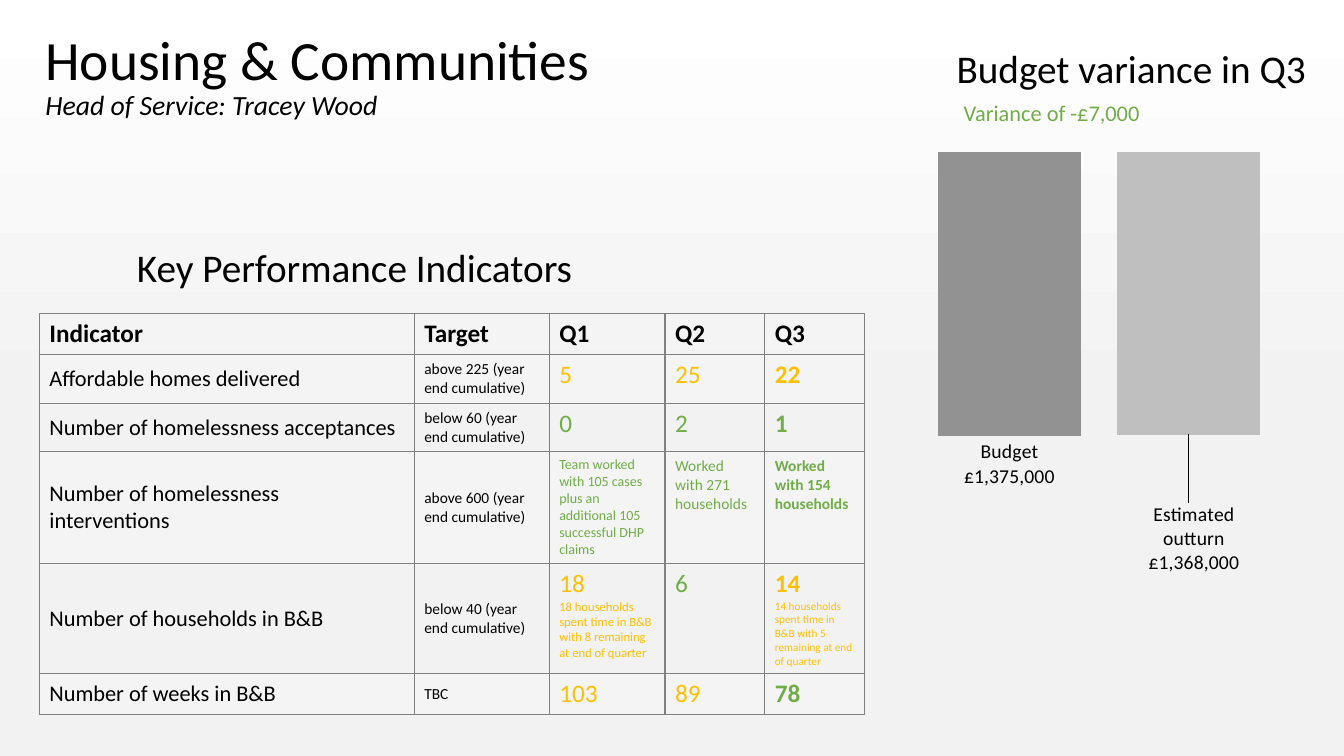
from collections import namedtuple

from lxml import etree
from pptx import Presentation
from pptx.chart.data import CategoryChartData as ChartData
from pptx.dml.color import RGBColor
from pptx.enum.chart import XL_CHART_TYPE as ChartType, XL_LABEL_POSITION as LabelPosition
from pptx.enum.text import MSO_ANCHOR as Anchor, MSO_AUTO_SIZE as AutoSize, PP_ALIGN as Align
from pptx.oxml import parse_xml
from pptx.oxml.ns import nsdecls, qn
from pptx.util import Inches, Pt

BLACK = RGBColor(0x00, 0x00, 0x00)
WHITE = RGBColor(0xFF, 0xFF, 0xFF)
PALE = RGBColor(0xF2, 0xF2, 0xF2)
AMBER = RGBColor(0xFF, 0xC0, 0x00)
GREEN = RGBColor(0x70, 0xAD, 0x47)
DARK_GREY = RGBColor(0x92, 0x92, 0x92)
LIGHT_GREY = RGBColor(0xBF, 0xBF, 0xBF)
BORDER = "808080"
FONT = "Calibri"
SLIDE_WIDTH, SLIDE_HEIGHT = Inches(13.33), Inches(7.5)

Reading = namedtuple("Reading", "text colour size note note_size", defaults=(18, "", 9))

COLUMNS = (372, 134, 115, 99, 99)
ROWS = (41, 48, 48, 111, 108, 41)
HEADINGS = ("Indicator", "Target", "Q1", "Q2", "Q3")
INDICATORS = [
    ("Affordable homes delivered", "above 225 (year end cumulative)",
     Reading("5", AMBER), Reading("25", AMBER), Reading("22", AMBER)),
    ("Number of homelessness acceptances", "below 60 (year end cumulative)",
     Reading("0", GREEN), Reading("2", GREEN), Reading("1", GREEN)),
    ("Number of homelessness interventions", "above 600 (year end cumulative)",
     Reading("Team worked with 105 cases plus an additional 105 successful DHP claims", GREEN, 10),
     Reading("Worked with 271 households", GREEN, 11),
     Reading("Worked with 154 households", GREEN, 11)),
    ("Number of households in B&B", "below 40 (year end cumulative)",
     Reading("18", AMBER, 18,
             "18 households spent time in B&B with 8 remaining at end of quarter", 9),
     Reading("6", GREEN),
     Reading("14", AMBER, 18,
             "14 households spent time in B&B with 5 remaining at end of quarter", 8)),
    ("Number of weeks in B&B", "TBC",
     Reading("103", AMBER), Reading("89", AMBER), Reading("78", GREEN)),
]
BARS = [
    ("Series 1", -1375, DARK_GREY, "Budget £1,375,000", 0),
    ("Series 2", -1368, LIGHT_GREY, "Estimated outturn £1,368,000", 0.15),
]


def share(left, top, width, height):
    """Turn percentages of the slide into a box."""
    return (round(SLIDE_WIDTH * left / 100), round(SLIDE_HEIGHT * top / 100),
            round(SLIDE_WIDTH * width / 100), round(SLIDE_HEIGHT * height / 100))


def add_span(para, text, size, colour=BLACK, bold=False, italic=False):
    """Add one formatted run to a paragraph."""
    span = para.add_run()
    span.text = text
    font = span.font
    font.name, font.size, font.bold, font.italic = FONT, Pt(size), bold, italic
    font.color.rgb = colour


def paint_background(page):
    """Fade the page from white to pale grey."""
    fill = page.background.fill
    fill.gradient()
    fill.gradient_angle = 270
    for stop, colour, position in zip(fill.gradient_stops, (WHITE, PALE), (0, 0.54)):
        stop.color.rgb = colour
        stop.position = position


def place_title(page, box):
    """Place the service name and its head in the title placeholder."""
    title = page.shapes.title
    title.left, title.top, title.width, title.height = box
    frame = title.text_frame
    frame.auto_size = AutoSize.NONE
    frame.vertical_anchor = Anchor.BOTTOM
    para = frame.paragraphs[0]
    para.alignment = Align.LEFT
    para.line_spacing = 0.9
    add_span(para, "Housing & Communities", 39.6)
    para.add_line_break()
    add_span(para, "Head of Service: Tracey Wood", 19.8, italic=True)


def place_text(page, box, text, size, colour=BLACK, anchor=Anchor.BOTTOM, spacing=0.9):
    """Place a single line of text in a box."""
    frame = page.shapes.add_textbox(*box).text_frame
    frame.word_wrap = True
    frame.vertical_anchor = anchor
    para = frame.paragraphs[0]
    para.line_spacing = spacing
    add_span(para, text, size, colour)


def style_cell(cell, shaded):
    """Give a cell grey borders and a clear or faint white fill."""
    properties = cell._tc.get_or_add_tcPr()
    for side in ("lnL", "lnR", "lnT", "lnB"):
        properties.append(parse_xml(
            f'<a:{side} {nsdecls("a")} w="12700"><a:solidFill>'
            f'<a:srgbClr val="{BORDER}"/></a:solidFill></a:{side}>'))
    if shaded:
        cell.fill.solid()
        cell.fill.fore_color.rgb = WHITE
        colour = properties.find(qn("a:solidFill")).find(qn("a:srgbClr"))
        etree.SubElement(colour, qn("a:alpha")).set("val", "20000")
    else:
        cell.fill.background()


def write_reading(cell, reading, bold):
    """Write a quarter's figure and any note below it."""
    frame = cell.text_frame
    add_span(frame.paragraphs[0], reading.text, reading.size, reading.colour, bold)
    if reading.note:
        add_span(frame.add_paragraph(), reading.note, reading.note_size, reading.colour)


def place_indicators(page, box):
    """Place the table of key performance indicators."""
    table = page.shapes.add_table(len(ROWS), len(COLUMNS), *box).table
    table.first_row = table.horz_banding = False
    for column, weight in zip(table.columns, COLUMNS):
        column.width = round(box[2] * weight / sum(COLUMNS))
    for row, weight in zip(table.rows, ROWS):
        row.height = round(box[3] * weight / sum(ROWS))
    for index, heading in enumerate(HEADINGS):
        cell = table.cell(0, index)
        add_span(cell.text_frame.paragraphs[0], heading, 18, bold=True)
        style_cell(cell, False)
    for number, (name, target, *readings) in enumerate(INDICATORS, 1):
        for index, (text, size) in enumerate(((name, 16), (target, 11))):
            cell = table.cell(number, index)
            cell.vertical_anchor = Anchor.MIDDLE
            add_span(cell.text_frame.paragraphs[0], text, size)
        for index, reading in enumerate(readings, 2):
            write_reading(table.cell(number, index), reading, HEADINGS[index] == "Q3")
        for index in range(len(COLUMNS)):
            style_cell(table.cell(number, index), number % 2 == 1)


def manual_layout(**values):
    """Build a chart layout element from its settings."""
    parts = "".join(f'<c:{name} val="{value}"/>' for name, value in values.items())
    return parse_xml(f'<c:layout {nsdecls("c")}><c:manualLayout>{parts}'
                     '</c:manualLayout></c:layout>')


def place_budget_chart(page, box):
    """Place the hanging bars for budget and estimated outturn."""
    data = ChartData()
    data.categories = ["1"]
    for name, value, *_ in BARS:
        data.add_series(name, [value])
    chart = page.shapes.add_chart(ChartType.COLUMN_CLUSTERED, *box, data).chart
    chart.has_title = chart.has_legend = False
    chart.font.name, chart.font.size = FONT, Pt(10)
    chart.font.color.rgb = WHITE
    chart.category_axis.visible = chart.value_axis.visible = False
    chart.value_axis.has_major_gridlines = False
    chart.value_axis.maximum_scale, chart.value_axis.minimum_scale = 0, -1890
    plot = chart.plots[0]
    plot.gap_width, plot.overlap, plot.vary_by_categories = 150, -25, False
    for series, (_, _, colour, caption, drop) in zip(plot.series, BARS):
        series.invert_if_negative = False
        series.format.fill.solid()
        series.format.fill.fore_color.rgb = colour
        labels = series.data_labels
        labels.show_value = True
        labels.font.name, labels.font.size = FONT, Pt(14)
        labels.font.color.rgb = BLACK
        label = series.points[0].data_label
        add_span(label.text_frame.paragraphs[0], caption, 14)
        label.position = LabelPosition.OUTSIDE_END
        if drop:
            mark = series._element.find(".//" + qn("c:dLbl"))
            mark.find(qn("c:idx")).addnext(manual_layout(x=0.01, y=drop))
    area = chart._chartSpace.find(".//" + qn("c:plotArea"))
    for layout in area.findall(qn("c:layout")):
        area.remove(layout)
    area.insert(0, manual_layout(layoutTarget="inner", xMode="edge", yMode="edge",
                                 x=0.06, y=0.003, w=0.94, h=0.919))


def main():
    """Build and save the deck."""
    deck = Presentation()
    deck.slide_width, deck.slide_height = SLIDE_WIDTH, SLIDE_HEIGHT
    page = deck.slides.add_slide(deck.slide_layouts[5])
    paint_background(page)
    place_title(page, share(2.63, 5.73, 57.84, 11.07))
    place_indicators(page, share(2.93, 41.47, 61.4, 52.93))
    place_text(page, share(70.44, 0, 49.96, 12.8), "Budget variance in Q3", 28)
    place_text(page, share(70.97, 12.4, 15.83, 4.93), "Variance of -£7,000", 16,
               GREEN, Anchor.TOP, 1)
    place_text(page, share(9.45, 28.13, 44.41, 11.07), "Key Performance Indicators", 28)
    place_budget_chart(page, share(59.26, 20, 42.46, 56.13))
    deck.save("out.pptx")


if __name__ == "__main__":
    main()
